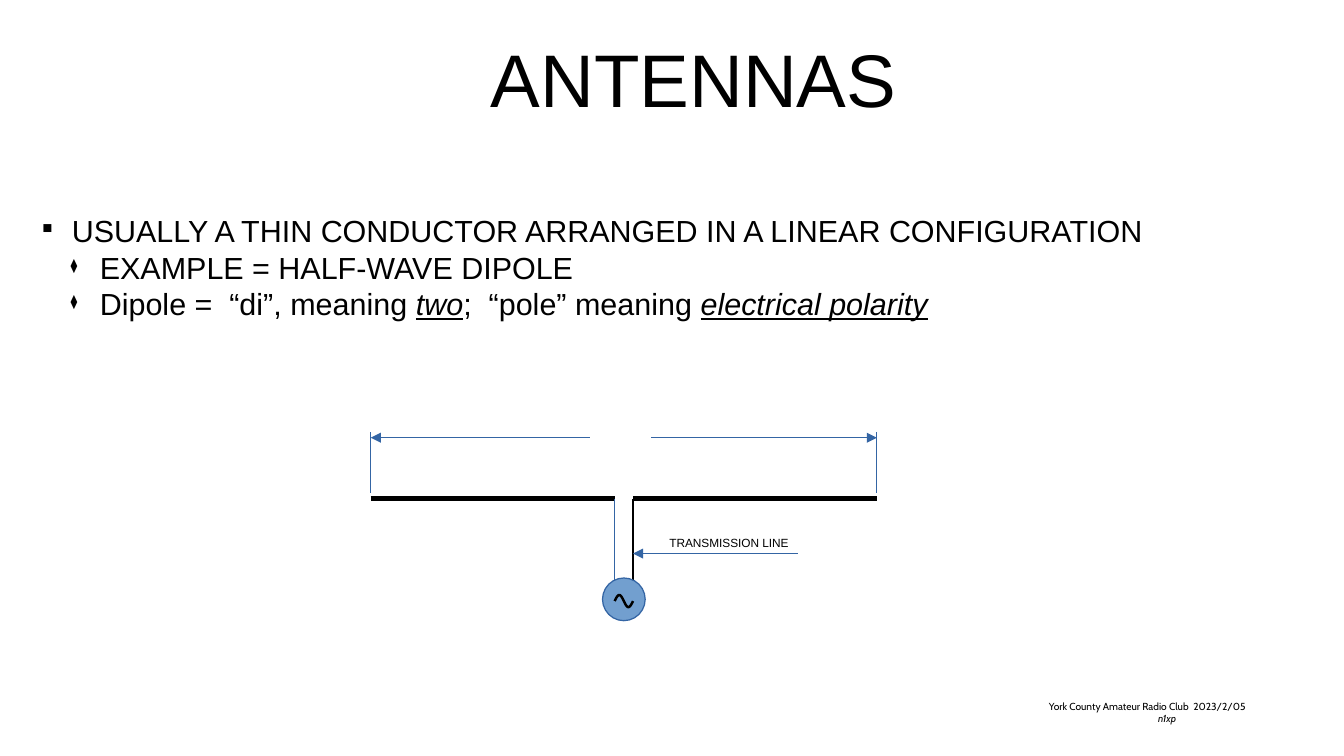
from math import pi, sin

from lxml.etree import SubElement
from pptx import Presentation
from pptx.dml.color import RGBColor
from pptx.enum.shapes import MSO_CONNECTOR, MSO_SHAPE
from pptx.enum.text import MSO_ANCHOR, PP_ALIGN
from pptx.oxml.ns import qn
from pptx.util import Inches, Pt

BLACK = RGBColor(0x00, 0x00, 0x00)
BLUE = RGBColor(0x34, 0x65, 0xA4)
LIGHT_BLUE = RGBColor(0x72, 0x9F, 0xCF)

LEFT_END, LEFT_FEED, RIGHT_FEED, RIGHT_END = 3.04, 5.04, 5.19, 7.19
DIPOLE_Y, ARROW_Y, LABEL_Y = 4.09, 3.59, 4.54


def style_span(span, size, font="Arial", emphasis=False):
    """Set the font of one run."""
    span.font.name = font
    span.font.size = Pt(size)
    span.font.color.rgb = BLACK
    if emphasis:
        span.font.italic = True


def add_text_box(page, left, top, width, height):
    """Add an empty wrapping text box and return its text frame."""
    box = page.shapes.add_textbox(Inches(left), Inches(top), Inches(width), Inches(height))
    box.text_frame.word_wrap = True
    return box.text_frame


def add_title(page, text):
    """Place and format the title placeholder."""
    title = page.shapes.title
    title.left, title.top = Inches(1.54), Inches(0.22)
    title.width, title.height = Inches(8.3), Inches(0.78)
    frame = title.text_frame
    frame.text = text
    frame.vertical_anchor = MSO_ANCHOR.TOP
    frame.paragraphs[0].alignment = PP_ALIGN.CENTER
    style_span(frame.paragraphs[0].runs[0], 44)


def set_bullet(para, symbol, indent):
    """Give a paragraph a small black bullet with a hanging indent."""
    properties = para._p.get_or_add_pPr()
    properties.set("marL", str(Inches(indent)))
    properties.set("indent", str(Inches(-0.24)))
    color = SubElement(properties, qn("a:buClr"))
    SubElement(color, qn("a:srgbClr"), val=str(BLACK))
    SubElement(properties, qn("a:buSzPct"), val="45000")
    SubElement(properties, qn("a:buChar"), char=symbol)


def add_bullets(page, items):
    """Write bulleted paragraphs whose odd-numbered parts are emphasised."""
    frame = add_text_box(page, 0.25, 1.69, 10.29, 2.2)
    for number, (level, parts) in enumerate(items):
        para = frame.add_paragraph() if number else frame.paragraphs[0]
        para.level = level
        set_bullet(para, "⧫" if level else "■", 0.47 if level else 0.24)
        for index, part in enumerate(parts):
            span = para.add_run()
            span.text = part
            emphasis = index % 2 == 1
            style_span(span, 18, emphasis=emphasis)
            if emphasis:
                span.font.underline = True


def add_line(page, start, end, color=BLUE, width=0.75, arrow=None):
    """Draw a straight line, with an arrowhead at headEnd or tailEnd if named."""
    line = page.shapes.add_connector(
        MSO_CONNECTOR.STRAIGHT, *(Inches(value) for value in (*start, *end)))
    line.line.color.rgb = color
    line.line.width = Pt(width)
    if arrow:
        SubElement(line.line._get_or_add_ln(), qn(f"a:{arrow}"), type="triangle")
    SubElement(line._element.spPr, qn("a:effectLst"))


def add_source(page):
    """Draw the signal source: a circle with a sine wave."""
    circle = page.shapes.add_shape(
        MSO_SHAPE.OVAL, Inches(4.94), Inches(4.74), Inches(0.35), Inches(0.35))
    circle.shadow.inherit = False
    circle.fill.solid()
    circle.fill.fore_color.rgb = LIGHT_BLUE
    circle.line.color.rgb = BLUE
    circle.line.width = Pt(0.75)

    steps = 24
    points = [(Inches(LEFT_FEED + (RIGHT_FEED - LEFT_FEED) * step / steps),
               Inches(4.93 - 0.05 * sin(2 * pi * step / steps)))
              for step in range(steps + 1)]
    builder = page.shapes.build_freeform(*points[0])
    builder.add_line_segments(points[1:], close=False)
    wave = builder.convert_to_shape()
    wave.shadow.inherit = False
    wave.fill.background()
    wave.line.color.rgb = BLACK
    wave.line.width = Pt(1.45)


def add_dipole(page):
    """Draw the half-wave dipole with its dimension and feed lines."""
    for outer, feed in ((LEFT_END, LEFT_FEED), (RIGHT_FEED, RIGHT_END)):
        add_line(page, (outer, DIPOLE_Y), (feed, DIPOLE_Y), BLACK, 2.89)
    for feed, color in ((LEFT_FEED, BLUE), (RIGHT_FEED, BLACK)):
        add_line(page, (feed, DIPOLE_Y), (feed, 4.79), color)
    add_source(page)
    for end in (LEFT_END, RIGHT_END):
        add_line(page, (end, 4.04), (end, 3.54))
    add_line(page, (LEFT_END, ARROW_Y), (4.84, ARROW_Y), arrow="headEnd")
    add_line(page, (5.34, ARROW_Y), (RIGHT_END, ARROW_Y), arrow="tailEnd")
    add_line(page, (RIGHT_FEED, LABEL_Y), (6.54, LABEL_Y), arrow="headEnd")
    label = add_text_box(page, 5.39, 4.34, 1.25, 0.21)
    label.text = "TRANSMISSION LINE"
    style_span(label.paragraphs[0].runs[0], 7)


def add_footer(page):
    """Write the club name, date and call sign."""
    frame = add_text_box(page, 8.56, 5.71, 2.02, 0.27)
    frame.margin_left = frame.margin_right = Inches(0.04)
    frame.margin_top = frame.margin_bottom = Inches(0.04)
    frame.vertical_anchor = MSO_ANCHOR.MIDDLE
    frame.text = "York County Amateur Radio Club  2023/2/05\nn1xp"
    club, call_sign = frame.paragraphs
    call_sign.alignment = PP_ALIGN.CENTER
    style_span(club.runs[0], 6, "Cabin")
    style_span(call_sign.runs[0], 6, "Cabin", emphasis=True)


def main():
    """Build the slide and save it."""
    deck = Presentation()
    deck.slide_width, deck.slide_height = Inches(11.02), Inches(6.2)
    page = deck.slides.add_slide(deck.slide_layouts[5])
    add_title(page, "ANTENNAS")
    add_bullets(page, [
        (0, ["USUALLY A THIN CONDUCTOR ARRANGED IN A LINEAR CONFIGURATION"]),
        (1, ["EXAMPLE = HALF-WAVE DIPOLE"]),
        (1, ["Dipole =  “di”, meaning ", "two", ";  “pole” meaning ", "electrical polarity"]),
    ])
    add_dipole(page)
    add_footer(page)
    deck.save("out.pptx")


if __name__ == "__main__":
    main()
